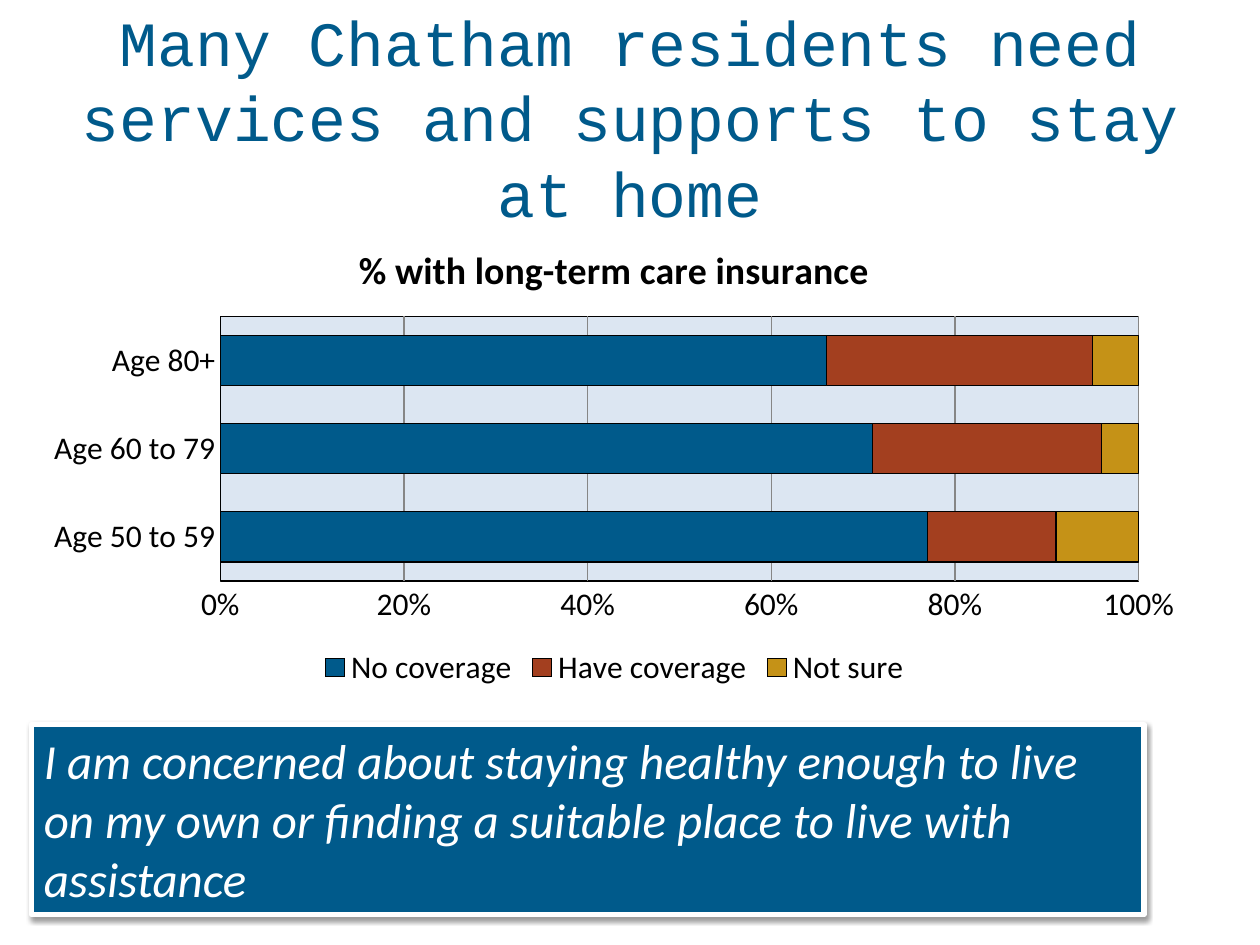
from dataclasses import dataclass

from pptx import Presentation
from pptx.chart.data import CategoryChartData
from pptx.dml.color import RGBColor
from pptx.enum.chart import XL_CHART_TYPE, XL_LEGEND_POSITION, XL_TICK_MARK
from pptx.enum.shapes import MSO_SHAPE
from pptx.enum.text import MSO_ANCHOR, PP_ALIGN
from pptx.oxml import parse_xml
from pptx.oxml.ns import nsdecls
from pptx.util import Inches, Pt


@dataclass(frozen=True)
class Theme:
    blue: RGBColor = RGBColor(0x00, 0x5A, 0x8B)
    rust: RGBColor = RGBColor(0xA3, 0x3F, 0x1F)
    gold: RGBColor = RGBColor(0xC5, 0x92, 0x17)
    grid: RGBColor = RGBColor(0x86, 0x86, 0x86)
    black: RGBColor = RGBColor(0, 0, 0)
    white: RGBColor = RGBColor(255, 255, 255)
    plot: str = "DCE6F2"
    title_font: str = "Courier New"
    body_font: str = "Calibri"
    title: Pt = Pt(36)
    quote: Pt = Pt(28)
    chart_title: Pt = Pt(21.6)
    chart: Pt = Pt(18)


theme = Theme()
prs = Presentation()
prs.slide_width, prs.slide_height = Inches(10), Inches(7.5)
s = prs.slides.add_slide(prs.slide_layouts[6])

# A grid of 40 columns by 30 rows, a quarter inch each
COLS, ROWS = 40, 30


def place(col, row, cols, rows):
    """Turn grid units into left, top, width and height."""
    w, h = prs.slide_width / COLS, prs.slide_height / ROWS
    return int(col * w), int(row * h), int(cols * w), int(rows * h)


def style(font, name, size, color):
    font.name, font.size = name, size
    font.color.rgb = color


# Title
tf = s.shapes.add_textbox(*place(2, 1.2, 36, 5)).text_frame
tf.word_wrap = True
tf.vertical_anchor = MSO_ANCHOR.MIDDLE
p = tf.paragraphs[0]
p.alignment = PP_ALIGN.CENTER
r = p.add_run()
r.text = "Many Chatham residents need services and supports to stay at home"
style(r.font, theme.title_font, theme.title, theme.blue)

# Insurance chart
coverage = [
    ("No coverage", (0.77, 0.71, 0.66), theme.blue),
    ("Have coverage", (0.14, 0.25, 0.29), theme.rust),
    ("Not sure", (0.09, 0.04, 0.05), theme.gold),
]
data = CategoryChartData(number_format="0%")
data.categories = ["Age 50 to 59", "Age 60 to 79", "Age 80+"]
for name, values, _ in coverage:
    data.add_series(name, values)
chart = s.shapes.add_chart(
    XL_CHART_TYPE.BAR_STACKED, *place(1, 7, 37, 15), data).chart
style(chart.font, theme.body_font, theme.chart, theme.black)

chart.has_title = True
r = chart.chart_title.text_frame.paragraphs[0].add_run()
r.text = "% with long-term care insurance"
style(r.font, theme.body_font, theme.chart_title, theme.black)
r.font.bold = True

chart.has_legend = True
chart.legend.position = XL_LEGEND_POSITION.BOTTOM
chart.legend.include_in_layout = False

plot = chart.plots[0]
plot.gap_width, plot.overlap = 75, 100
for series, (_, _, color) in zip(plot.series, coverage):
    series.format.fill.solid()
    series.format.fill.fore_color.rgb = color
    series.format.line.color.rgb = theme.black
    series.format.line.width = Pt(0.75)

ages, share = chart.category_axis, chart.value_axis
for axis in (ages, share):
    axis.major_tick_mark = axis.minor_tick_mark = XL_TICK_MARK.NONE
ages.format.line.color.rgb = theme.black
share.format.line.fill.background()
share.minimum_scale, share.maximum_scale, share.major_unit = 0, 1, 0.2
share.tick_labels.number_format = "0%"
share.tick_labels.number_format_is_linked = False
share.has_major_gridlines = True
share.major_gridlines.format.line.color.rgb = theme.grid
share.major_gridlines.format.line.width = Pt(0.75)

# Plot area: inner position as shares of the chart, then fill and border
area = chart._chartSpace.chart.plotArea
for old in area.xpath("c:layout"):
    area.remove(old)
bounds = "".join(f'<c:{tag} val="{value}"/>' for tag, value in (
    ("layoutTarget", "inner"), ("xMode", "edge"), ("yMode", "edge"),
    ("x", 0.162), ("y", 0.203), ("w", 0.788), ("h", 0.56)))
area.insert(0, parse_xml(
    f'<c:layout {nsdecls("c")}><c:manualLayout>{bounds}</c:manualLayout></c:layout>'))
area.append(parse_xml(
    f'<c:spPr {nsdecls("c", "a")}>'
    f'<a:solidFill><a:srgbClr val="{theme.plot}"/></a:solidFill>'
    f'<a:ln w="9525"><a:solidFill><a:srgbClr val="{theme.black}"/></a:solidFill></a:ln>'
    '</c:spPr>'))

# Resident's concern
sp = s.shapes.add_shape(MSO_SHAPE.RECTANGLE, *place(1, 23, 35.32, 6.04))
sp.fill.solid()
sp.fill.fore_color.rgb = theme.blue
sp.line.color.rgb = theme.white
sp.line.width = Pt(3)
sp.shadow.inherit = False
sp._element.spPr.find(".//{*}effectLst").append(parse_xml(
    f'<a:outerShdw {nsdecls("a")} blurRad="40000" dist="20000" dir="5400000" rotWithShape="0">'
    f'<a:srgbClr val="{theme.black}"><a:alpha val="38000"/></a:srgbClr></a:outerShdw>'))
tf = sp.text_frame
tf.word_wrap = True
tf.vertical_anchor = MSO_ANCHOR.TOP
p = tf.paragraphs[0]
p.alignment = PP_ALIGN.LEFT
r = p.add_run()
r.text = ("I am concerned about staying healthy enough to live on my own "
          "or finding a suitable place to live with assistance")
style(r.font, theme.body_font, theme.quote, theme.white)
r.font.italic = True

prs.save("out.pptx")
